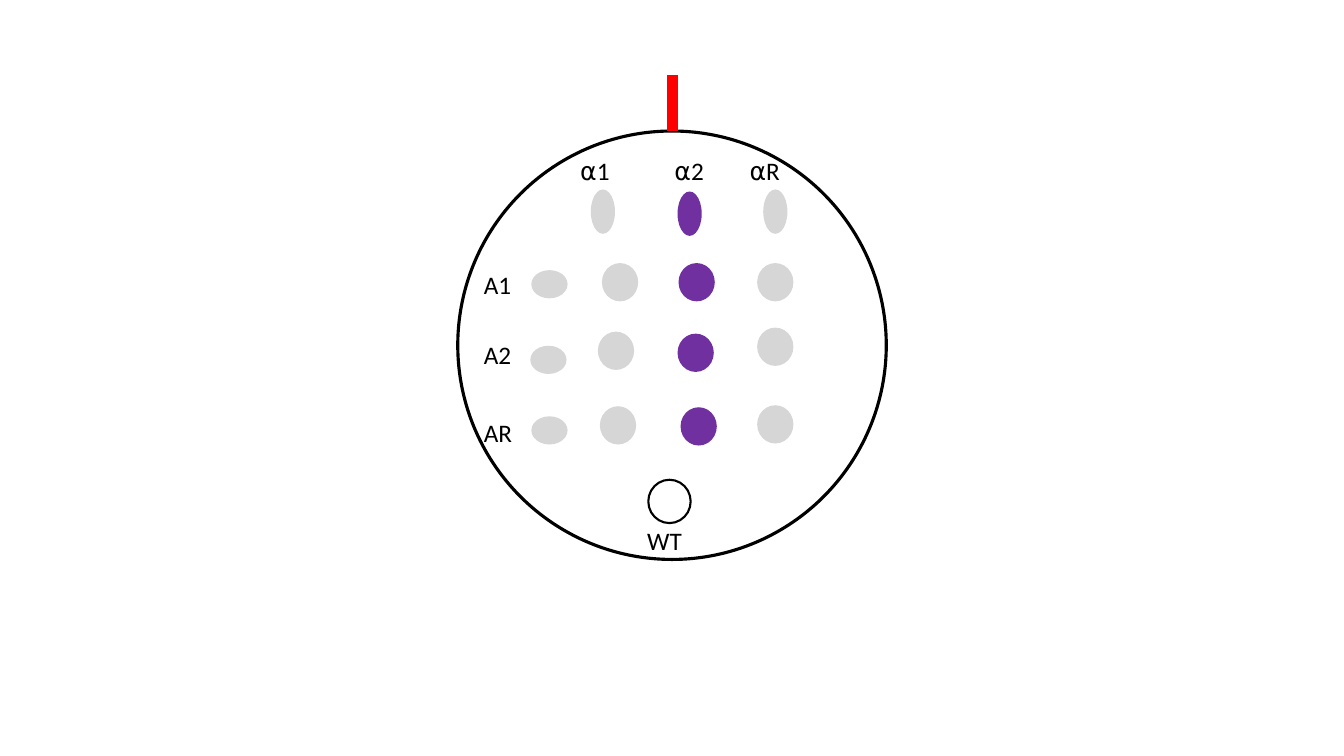
from lxml import etree
from pptx import Presentation
from pptx.dml.color import RGBColor
from pptx.enum.shapes import MSO_CONNECTOR, MSO_SHAPE
from pptx.enum.text import PP_ALIGN
from pptx.oxml.ns import qn
from pptx.util import Inches, Pt

ELLIPSE = MSO_SHAPE.OVAL
STRAIGHT = MSO_CONNECTOR.STRAIGHT
LEFT, CENTER = PP_ALIGN.LEFT, PP_ALIGN.CENTER
BLACK, PURPLE, RED = "000000", "7030A0", "FF0000"

# Spot sizes: width, height
TALL, WIDE, ROUND = (0.24, 0.44), (0.36, 0.28), (0.36, 0.38)
PARENT_LABEL_TOP = 1.49
ROW_LABEL_LEFT = 4.7

# Column: label, label left, label width, parent spot left and top, color
COLUMNS = [
    ("⍺1", 5.55, 0.7, 5.86, 1.88, BLACK),
    ("⍺2", 6.42, 0.83, 6.72, 1.9, PURPLE),
    ("⍺R", 7.17, 0.83, 7.57, 1.88, BLACK),
]
# Row: label, label top, parent spot left and top, cross spots (left, top)
ROWS = [
    ("A1", 2.62, 5.27, 2.68, [(5.97, 2.61), (6.73, 2.61), (7.51, 2.61)]),
    ("A2", 3.32, 5.26, 3.43, [(5.93, 3.29), (6.72, 3.31), (7.51, 3.25)]),
    ("AR", 4.09, 5.27, 4.13, [(5.95, 4.03), (6.75, 4.04), (7.51, 4.02)]),
]


def color(value):
    return RGBColor.from_string(value)


class PlateSlide:
    font, text_size, label_height = "Calibri", 18, 0.49
    faint_alpha = 16

    def __init__(self, page):
        self.shapes = page.shapes

    def ellipse(self, left, top, width, height):
        shape = self.shapes.add_shape(
            ELLIPSE, Inches(left), Inches(top), Inches(width), Inches(height))
        shape.shadow.inherit = False
        return shape

    def ring(self, left, top, width, height, weight):
        """Draw an unfilled black outline."""
        shape = self.ellipse(left, top, width, height)
        shape.fill.background()
        shape.line.color.rgb = color(BLACK)
        shape.line.width = Pt(weight)

    def spot(self, left, top, size, fill):
        """Draw a colony spot; black ones are faint."""
        shape = self.ellipse(left, top, *size)
        shape.line.fill.background()
        shape.fill.solid()
        shape.fill.fore_color.rgb = color(fill)
        if fill == BLACK:
            tint = shape._element.spPr.find(".//" + qn("a:srgbClr"))
            alpha = etree.SubElement(tint, qn("a:alpha"))
            alpha.set("val", str(self.faint_alpha * 1000))

    def label(self, text, left, top, width=0.75, align=LEFT):
        box = self.shapes.add_textbox(
            Inches(left), Inches(top), Inches(width), Inches(self.label_height))
        box.text_frame.word_wrap = True
        para = box.text_frame.paragraphs[0]
        para.text = text
        para.alignment = align
        para.font.name = self.font
        para.font.size = Pt(self.text_size)
        para.font.color.rgb = color(BLACK)

    def line(self, start, end, stroke, weight):
        connector = self.shapes.add_connector(
            STRAIGHT, *(Inches(value) for value in start + end))
        connector.line.color.rgb = color(stroke)
        connector.line.width = Pt(weight)
        etree.SubElement(connector._element.spPr, qn("a:effectLst"))


def main():
    deck = Presentation()
    deck.slide_width, deck.slide_height = Inches(13.33), Inches(7.5)
    plate = PlateSlide(deck.slides.add_slide(deck.slide_layouts[6]))

    plate.ring(4.54, 1.3, 4.25, 4.25, 2.25)
    for text, label_left, width, left, top, fill in COLUMNS:
        plate.label(text, label_left, PARENT_LABEL_TOP, width, CENTER)
        plate.spot(left, top, TALL, fill)

    for text, label_top, left, top, crosses in ROWS:
        plate.label(text, ROW_LABEL_LEFT, label_top)
        plate.spot(left, top, WIDE, BLACK)
        for (cross_left, cross_top), column in zip(crosses, COLUMNS):
            plate.spot(cross_left, cross_top, ROUND, column[-1])

    plate.ring(6.43, 4.76, 0.42, 0.43, 1.5)
    plate.label("WT", 6.32, 5.16)
    plate.line((6.67, 0.74), (6.67, 1.3), RED, 7.75)

    deck.save("out.pptx")


if __name__ == "__main__":
    main()
